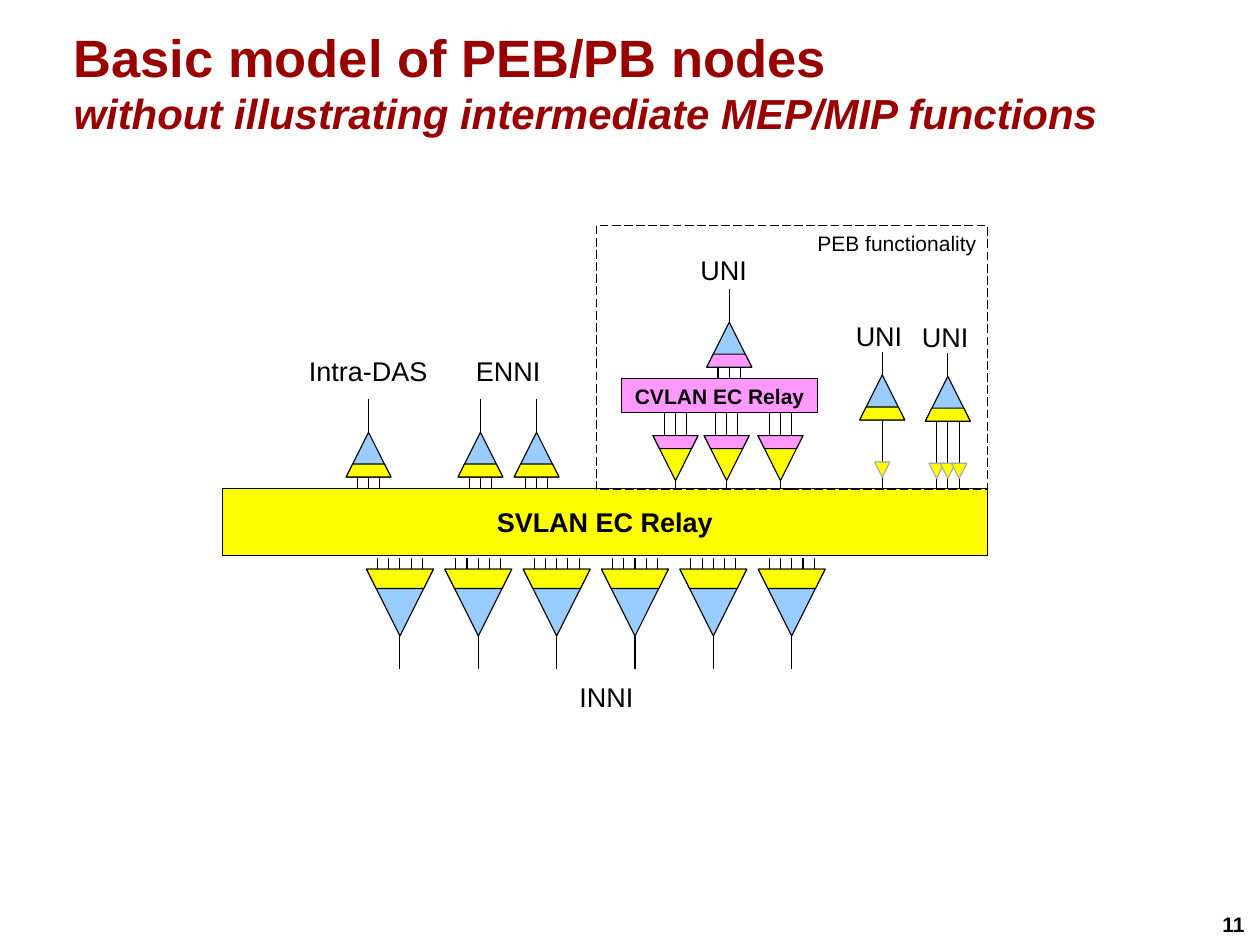
from pptx import Presentation
from pptx.dml.color import RGBColor
from pptx.enum.dml import MSO_LINE
from pptx.enum.shapes import MSO_CONNECTOR, MSO_SHAPE
from pptx.enum.text import MSO_ANCHOR, MSO_AUTO_SIZE, PP_ALIGN
from pptx.oxml.ns import qn
from pptx.util import Pt
from lxml.etree import SubElement

DARK_RED = RGBColor(0x99, 0x00, 0x00)
BLACK = RGBColor(0x00, 0x00, 0x00)
YELLOW = RGBColor(0xFF, 0xFF, 0x00)
PINK = RGBColor(0xFF, 0x99, 0xFF)
BLUE = RGBColor(0x99, 0xCC, 0xFF)
GRAY = RGBColor(0xA6, 0xA6, 0xA6)

LEG_PITCH = 7.5
BAND_RATIO = 0.29


def style_text(paragraph, size, color=BLACK, bold=False, italic=False):
    for run in paragraph.runs:
        font = run.font
        font.name = "Arial"
        font.size = Pt(size)
        font.bold = bold
        font.italic = italic
        font.color.rgb = color


def add_title(slide, heading, subheading):
    title = slide.shapes.title
    title.left, title.top = Pt(41.8), Pt(14.4)
    title.width, title.height = Pt(756), Pt(80)
    frame = title.text_frame
    frame.text = f"{heading}\n{subheading}"
    frame.auto_size = MSO_AUTO_SIZE.NONE
    frame.vertical_anchor = MSO_ANCHOR.MIDDLE
    for paragraph in frame.paragraphs:
        paragraph.alignment = PP_ALIGN.LEFT
    style_text(frame.paragraphs[0], 35, DARK_RED, bold=True)
    style_text(frame.paragraphs[1], 28, DARK_RED, bold=True, italic=True)


def add_label(slide, text, left, top, width):
    label = slide.shapes.add_textbox(Pt(left), Pt(top), Pt(width), Pt(21.6))
    frame = label.text_frame
    frame.word_wrap = True
    frame.margin_left = frame.margin_right = 0
    frame.margin_top = frame.margin_bottom = 0
    frame.text = text
    frame.paragraphs[0].alignment = PP_ALIGN.CENTER
    style_text(frame.paragraphs[0], 18)


def add_page_number(slide, number):
    page = slide.shapes.add_textbox(Pt(807.8), Pt(604), Pt(31.7), Pt(24.5))
    page.text_frame.word_wrap = False
    page.text_frame.text = number
    style_text(page.text_frame.paragraphs[0], 14, bold=True)


def add_outlined(shapes, kind, left, top, width, height, fill, outline=BLACK):
    part = shapes.add_shape(kind, Pt(left), Pt(top), Pt(width), Pt(height))
    part.shadow.inherit = False
    if fill is None:
        part.fill.background()
    else:
        part.fill.solid()
        part.fill.fore_color.rgb = fill
    part.line.color.rgb = outline
    part.line.width = Pt(0.75)
    return part


def add_box(slide, text, left, top, width, height, fill, size, bold=True,
            align=PP_ALIGN.CENTER, anchor=MSO_ANCHOR.MIDDLE):
    box = add_outlined(slide.shapes, MSO_SHAPE.RECTANGLE, left, top, width, height, fill)
    frame = box.text_frame
    frame.text = text
    frame.vertical_anchor = anchor
    frame.paragraphs[0].alignment = align
    style_text(frame.paragraphs[0], size, bold=bold)
    return box


def add_wire(slide, x, start, end):
    wire = slide.shapes.add_connector(MSO_CONNECTOR.STRAIGHT, Pt(x), Pt(start), Pt(x), Pt(end))
    wire.line.color.rgb = BLACK
    wire.line.width = Pt(0.75)
    SubElement(wire._element.spPr, qn("a:effectLst"))


def leg_positions(center, count):
    return [center + (i - (count - 1) / 2) * LEG_PITCH for i in range(count)]


def add_port(slide, center, top, side, tip_fill, band_fill, legs, leg_length, stem_length, up):
    left, bottom, band = center - side / 2, top + side, side * BAND_RATIO
    tip, base, outward = (top, bottom, 1) if up else (bottom, top, -1)
    for x in leg_positions(center, legs):
        add_wire(slide, x, base + outward * leg_length, base)
    add_wire(slide, center, tip - outward * stem_length, tip)

    port = slide.shapes.add_group_shape().shapes
    cone = add_outlined(port, MSO_SHAPE.ISOSCELES_TRIANGLE, left, top, side, side, tip_fill)
    band_top = bottom - band if up else top
    strip = add_outlined(port, MSO_SHAPE.TRAPEZOID, left, band_top, side, band, band_fill)
    strip.adjustments[0] = 0.498
    cone.rotation = strip.rotation = 0 if up else 180


def add_markers(slide, center, top, count):
    size = 10.2
    for x in leg_positions(center, count):
        marker = add_outlined(slide.shapes, MSO_SHAPE.ISOSCELES_TRIANGLE,
                              x - size / 2, top, size, size, YELLOW, GRAY)
        marker.rotation = 180


def main():
    deck = Presentation()
    deck.slide_width, deck.slide_height = Pt(840), Pt(630)
    slide = deck.slides.add_slide(deck.slide_layouts[5])

    add_title(slide, "Basic model of PEB/PB nodes",
              "without illustrating intermediate MEP/MIP functions")
    add_page_number(slide, "11")

    for i in range(6):
        add_port(slide, 266.6 + 52.24 * i, 379.4, 44.6, BLUE, YELLOW, 5, 7.6, 22.3, up=False)
    for center in (245.7, 320.3, 357.7):
        add_port(slide, center, 288.2, 29.8, BLUE, YELLOW, 3, 7.6, 22.4, up=True)

    add_port(slide, 486.2, 214.8, 30, BLUE, PINK, 3, 7.9, 22.4, up=True)
    for center in (450.3, 484.4, 520.3):
        add_port(slide, center, 290.4, 30, YELLOW, PINK, 3, 15.4, 5.6, up=False)
    add_box(slide, "CVLAN EC Relay", 414.5, 252.6, 130.5, 22.4, PINK, 14)

    for center, top, legs in ((631.9, 250.8, 3), (588.2, 250, 1)):
        add_port(slide, center, top, 30, BLUE, YELLOW, legs, 45.2, 15.2, up=True)
        add_markers(slide, center, top + 58, legs)

    add_box(slide, "SVLAN EC Relay", 148.3, 325.7, 509.8, 44.6, YELLOW, 18)
    peb = add_box(slide, "PEB functionality", 397.5, 150.4, 260.6, 175.6, None, 14,
                  bold=False, align=PP_ALIGN.RIGHT, anchor=MSO_ANCHOR.TOP)
    peb.line.dash_style = MSO_LINE.LONG_DASH

    for text, left, top, width in (
        ("Intra-DAS", 200.9, 236.2, 89.3),
        ("ENNI", 305.3, 236.2, 67),
        ("INNI", 370.8, 453.6, 67),
        ("UNI", 448.6, 169.2, 67.7),
        ("UNI", 552.2, 213.1, 67.7),
        ("UNI", 596.2, 213.8, 67.7),
    ):
        add_label(slide, text, left, top, width)

    deck.save("out.pptx")


if __name__ == "__main__":
    main()
